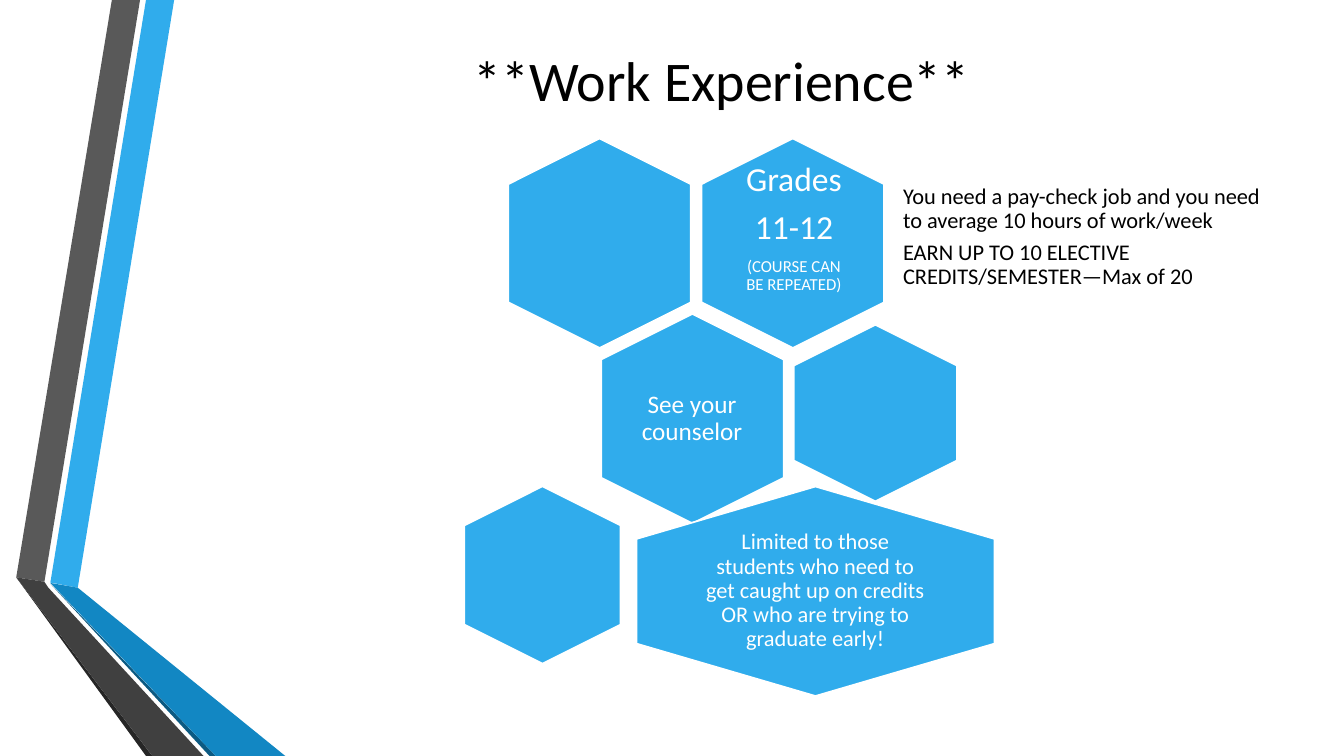
import dataclasses

import pptx
import pptx.dml.color
import pptx.enum.shapes
import pptx.enum.text
import pptx.util

Cm = pptx.util.Cm
Pt = pptx.util.Pt
RGB = pptx.dml.color.RGBColor.from_string
ALIGN = pptx.enum.text.PP_ALIGN


@dataclasses.dataclass(frozen=True)
class Theme:
    font: str = "Calibri"
    black: str = "000000"
    white: str = "FFFFFF"
    blue: str = "30ACEC"
    blue_fold: str = "1287C3"
    blue_edge: str = "0C5A82"
    grey: str = "595959"
    grey_fold: str = "404040"
    grey_edge: str = "262626"
    title: int = 40
    grades: int = 24
    step: int = 18
    body: int = 16
    remark: int = 12


theme = Theme()


def add_text(box, inset, lines, color, align, spaced=True):
    """Place a text box; lines holds one (text, size) pair per paragraph."""
    frame = slide.shapes.add_textbox(*map(Cm, box)).text_frame
    frame.word_wrap = True
    frame.vertical_anchor = pptx.enum.text.MSO_ANCHOR.MIDDLE
    frame.margin_left = frame.margin_right = Cm(inset)
    frame.margin_top = frame.margin_bottom = Cm(inset)
    for number, (text, size) in enumerate(lines):
        paragraph = frame.add_paragraph() if number else frame.paragraphs[0]
        paragraph.alignment = align
        if spaced:
            paragraph.line_spacing = 0.9
            paragraph.space_after = Pt(round(0.35 * size, 1))
        run = paragraph.add_run()
        run.text = text
        run.font.name = theme.font
        run.font.size = Pt(size)
        run.font.color.rgb = RGB(color)


presentation = pptx.Presentation()
presentation.slide_width = Cm(33.87)
presentation.slide_height = Cm(19.05)
slide = presentation.slides.add_slide(presentation.slide_layouts[6])

# Folded ribbons along the left edge
ribbons = [
    (theme.blue, [(1.27, 14.68), (1.96, 14.81), (4.39, 0), (3.68, 0)]),
    (theme.grey, [(3.53, 0), (2.82, 0), (0.41, 14.55), (1.12, 14.66)]),
    (theme.grey_edge, [(0.41, 14.55), (3.68, 19.05), (3.84, 19.05)]),
    (theme.blue_edge, [(1.27, 14.71), (5.28, 19.05), (5.44, 19.05)]),
    (theme.blue_fold, [(1.27, 14.69), (5.44, 19.05), (7.19, 19.05), (1.96, 14.81)]),
    (theme.grey_fold, [(5.13, 19.05), (1.22, 14.81), (1.12, 14.66),
                       (0.41, 14.55), (3.84, 19.05)]),
]
for color, corners in ribbons:
    start, *others = [(Cm(x), Cm(y)) for x, y in corners]
    outline = slide.shapes.build_freeform(*start)
    outline.add_line_segments(others, close=True)
    ribbon = outline.convert_to_shape()
    ribbon.shadow.inherit = False
    ribbon.fill.solid()
    ribbon.fill.fore_color.rgb = RGB(color)
    ribbon.line.fill.background()

# Title
add_text((4.27, 0.53, 27.84, 2.95), 0.25, [("**Work Experience**", theme.title)],
         theme.black, ALIGN.CENTER, spaced=False)

# Honeycomb: centre x, centre y, height, width of each upright cell
cells = [
    (19.98, 6.13, 5.28, 4.6),
    (15.11, 6.13, 5.28, 4.6),
    (17.45, 10.55, 5.28, 4.6),
    (22.06, 10.41, 4.45, 4.11),
    (20.55, 14.9, 5.28, 9.02),
    (13.67, 14.49, 4.47, 3.94),
]
for x, y, tall, wide in cells:
    cell = slide.shapes.add_shape(
        pptx.enum.shapes.MSO_SHAPE.HEXAGON,
        Cm(x - tall / 2), Cm(y - wide / 2), Cm(tall), Cm(wide))
    cell.rotation = 90
    cell.adjustments[0] = 0.25
    cell.shadow.inherit = False
    cell.fill.solid()
    cell.fill.fore_color.rgb = RGB(theme.blue)
    cell.line.color.rgb = RGB(theme.white)
    cell.line.width = Pt(1.25)

# Words inside the cells
add_text((18.42, 3.81, 3.18, 3.89), 0.25,
         [("Grades", theme.grades), ("11-12", theme.grades),
          ("(COURSE CAN BE REPEATED)", theme.remark)],
         theme.white, ALIGN.CENTER)
add_text((15.85, 8.74, 3.18, 3.63), 0.18, [("See your counselor", theme.step)],
         theme.white, ALIGN.CENTER)
add_text((17.55, 13.13, 5.99, 3.53), 0.18,
         [("Limited to those students who need to get caught up on credits "
           "OR who are trying to graduate early!", theme.body)],
         theme.white, ALIGN.CENTER)

# Requirements beside the grades cell
add_text((22.58, 4.39, 9.5, 3.18), 0.18,
         [("You need a pay-check job and you need to average "
           "10 hours of work/week", theme.body),
          ("EARN UP TO 10 ELECTIVE CREDITS/SEMESTER—Max of 20", theme.body)],
         theme.black, ALIGN.LEFT)

presentation.save("out.pptx")
